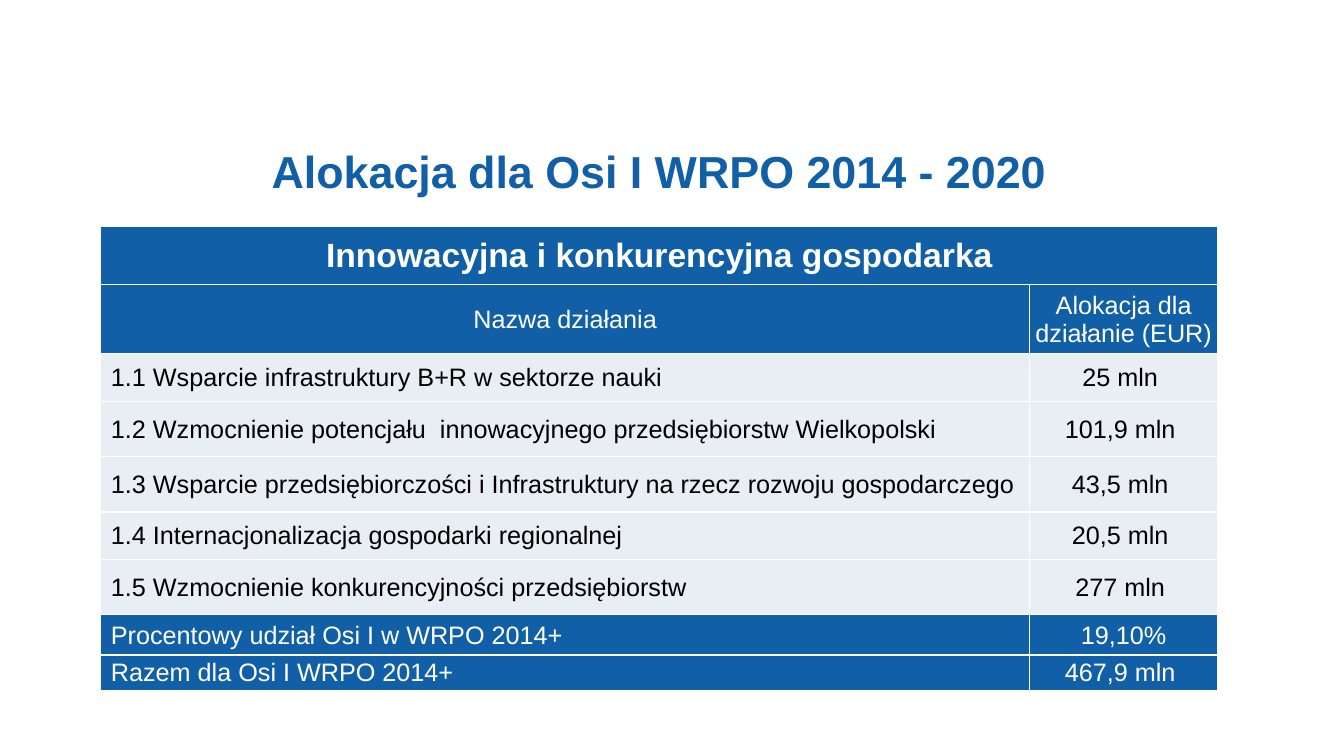
from typing import NamedTuple

from lxml.etree import SubElement
from pptx import Presentation
from pptx.dml.color import RGBColor
from pptx.enum.text import MSO_ANCHOR, PP_ALIGN
from pptx.oxml.ns import qn
from pptx.util import Inches, Pt

BLUE = "1160A7"
PALE = "E9EDF4"
WHITE = "FFFFFF"
BLACK = "000000"
COLUMN_WIDTHS = (9.21, 1.87)


class AllocationRow(NamedTuple):
    name: str
    amount: str
    height: float
    fill: str = PALE
    color: str = BLACK
    name_align: PP_ALIGN = PP_ALIGN.LEFT
    size: int = 18
    bold: bool = False


ROWS = [
    AllocationRow("Innowacyjna i konkurencyjna gospodarka", "", 0.57,
                  BLUE, WHITE, PP_ALIGN.CENTER, 24, True),
    AllocationRow("Nazwa działania", "Alokacja dla działanie (EUR)", 0.69,
                  BLUE, WHITE, PP_ALIGN.CENTER),
    AllocationRow("1.1 Wsparcie infrastruktury B+R w sektorze nauki", "25 mln ", 0.47),
    AllocationRow("1.2 Wzmocnienie potencjału  innowacyjnego przedsiębiorstw Wielkopolski",
                  "101,9 mln ", 0.55),
    AllocationRow("1.3 Wsparcie przedsiębiorczości i Infrastruktury na rzecz rozwoju gospodarczego",
                  "43,5 mln ", 0.55),
    AllocationRow("1.4 Internacjonalizacja gospodarki regionalnej", "20,5 mln ", 0.47),
    AllocationRow("1.5 Wzmocnienie konkurencyjności przedsiębiorstw", "277 mln ", 0.55),
    AllocationRow("Procentowy udział Osi I w WRPO 2014+", "19,10%", 0.4, BLUE, WHITE),
    AllocationRow("Razem dla Osi I WRPO 2014+", "467,9 mln ", 0.35, BLUE, WHITE),
]


def rgb(color: str) -> RGBColor:
    return RGBColor.from_string(color)


def write(frame, text: str, size: int, color: str, bold: bool, align: PP_ALIGN) -> None:
    frame.text = text
    paragraph = frame.paragraphs[0]
    paragraph.alignment = align
    font = paragraph.font
    if paragraph.runs:
        font = paragraph.runs[0].font
    font.name = "Arial"
    font.size = Pt(size)
    font.bold = bold
    font.color.rgb = rgb(color)


def add_borders(cell, color: str, width: float) -> None:
    properties = cell._tc.get_or_add_tcPr()
    for position, side in enumerate(("lnL", "lnR", "lnT", "lnB")):
        line = SubElement(properties, qn(f"a:{side}"), w=str(Pt(width)))
        fill = SubElement(line, qn("a:solidFill"))
        SubElement(fill, qn("a:srgbClr"), val=color)
        properties.insert(position, line)


def fill_cell(cell, text: str, row: AllocationRow, align: PP_ALIGN) -> None:
    write(cell.text_frame, text, row.size, row.color, row.bold, align)
    cell.vertical_anchor = MSO_ANCHOR.MIDDLE
    cell.margin_left = Inches(0.1 if align == PP_ALIGN.LEFT else 0.01)
    cell.margin_top = cell.margin_right = Inches(0.01)
    cell.margin_bottom = Inches(0)
    cell.fill.solid()
    cell.fill.fore_color.rgb = rgb(row.fill)
    add_borders(cell, WHITE, 1)


def add_title(slide) -> None:
    title = slide.shapes.add_textbox(Inches(0.54), Inches(1.07), Inches(12), Inches(1.25))
    frame = title.text_frame
    frame.word_wrap = True
    frame.vertical_anchor = MSO_ANCHOR.MIDDLE
    write(frame, "Alokacja dla Osi I WRPO 2014 - 2020", 32, BLUE, True, PP_ALIGN.CENTER)


def add_allocations(slide) -> None:
    height = sum(row.height for row in ROWS)
    allocations = slide.shapes.add_table(
        len(ROWS), len(COLUMN_WIDTHS), Inches(1), Inches(2.25),
        Inches(sum(COLUMN_WIDTHS)), Inches(height)).table
    allocations.first_row = allocations.horz_banding = False
    for column, width in zip(allocations.columns, COLUMN_WIDTHS):
        column.width = Inches(width)
    for index, row in enumerate(ROWS):
        allocations.rows[index].height = Inches(row.height)
        fill_cell(allocations.cell(index, 0), row.name, row, row.name_align)
        fill_cell(allocations.cell(index, 1), row.amount, row, PP_ALIGN.CENTER)
    allocations.cell(0, 0).merge(allocations.cell(0, 1))


def main() -> None:
    presentation = Presentation()
    presentation.slide_width = Inches(13.33)
    presentation.slide_height = Inches(7.5)
    slide = presentation.slides.add_slide(presentation.slide_layouts[6])
    add_title(slide)
    add_allocations(slide)
    presentation.save("out.pptx")


if __name__ == "__main__":
    main()
